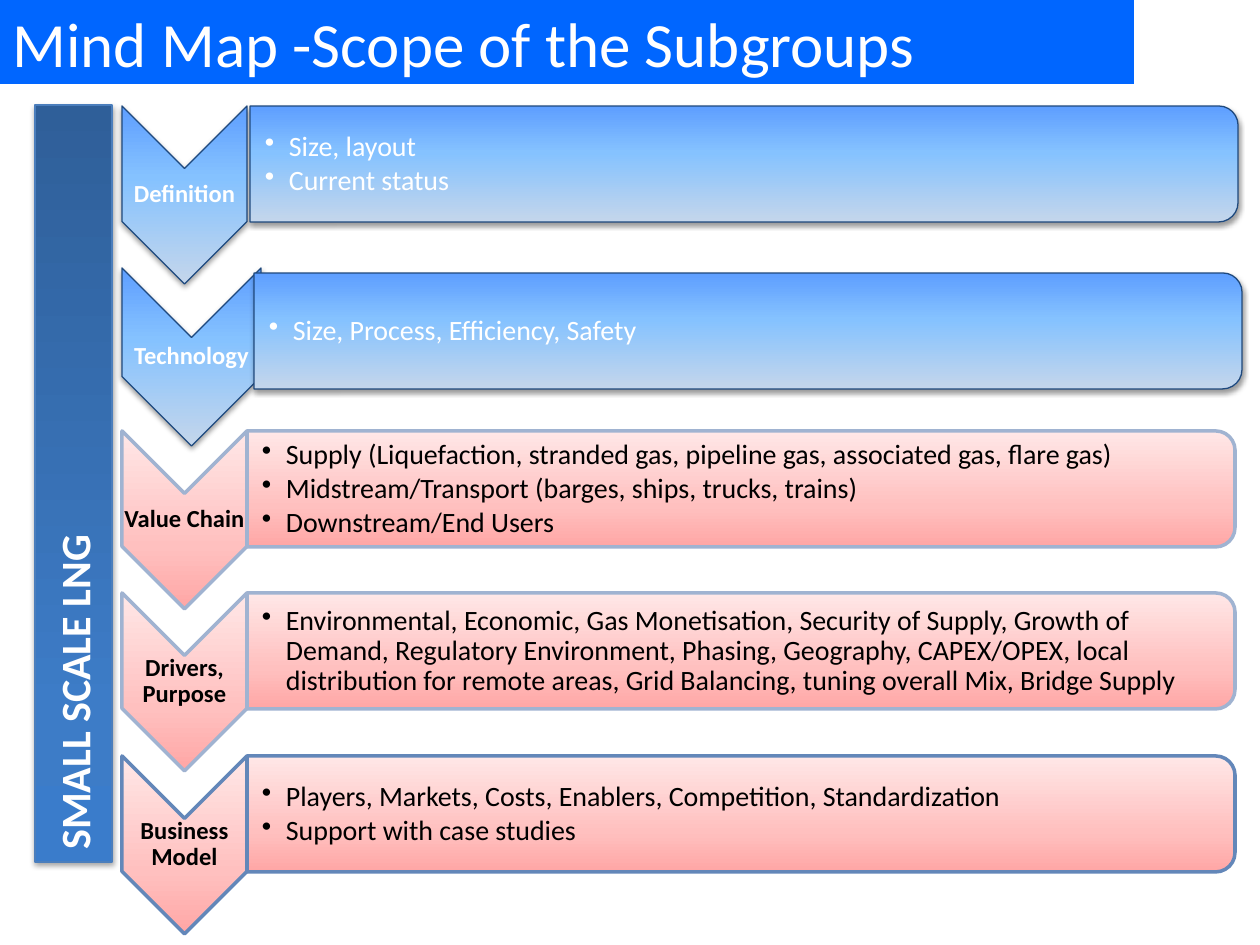
"""Build the mind map slide on the scope of the small scale LNG subgroups."""
from dataclasses import dataclass

from lxml import etree
from pptx import Presentation
from pptx import util as u
from pptx.dml.color import RGBColor
from pptx.enum import shapes, text
from pptx.oxml import parse_xml
from pptx.oxml.ns import nsdecls, qn


@dataclass(frozen=True)
class Look:
    """Hold the colours and paint of one kind of row."""
    stops: tuple
    angle: int
    line: str
    width: float
    ink: str
    shade: int = 0


class Theme:
    """Hold the fonts, type sizes and colours of the slide."""
    font = "Calibri"
    head, side, item, label = 36, 24, 16, 14
    white, black, banner = "FFFFFF", "000000", "0066FF"
    sky = ((0, "5E9EFF"), (40, "85C2FF"), (100, "C4D6EB"))
    rose = ((0, "FFA6A5"), (35, "FFC0BF"), (100, "FFE7E7"))
    navy = ((0, "2F5F99"), (80, "3D7CC7"), (100, "3A7CCB"))
    blue = Look(sky, 90, "1F497D", 0.75, white, 38)
    pink = Look(rose, 270, "A0B3D1", 2, black)
    deep = Look(rose, 270, "6387B9", 2, black)
    bar = Look(navy, 90, "4B7EBC", 0.75, white, 35)


ROWS = [
    ("Definition", Theme.blue, 125, 250, 0, ["Size, layout", "Current status"]),
    ("Technology", Theme.blue, 139, 254, 5, ["Size, Process, Efficiency, Safety"]),
    ("Value Chain", Theme.pink, 125, 247, 0, [
        "Supply (Liquefaction, stranded gas, pipeline gas, associated gas, flare gas)",
        "Midstream/Transport (barges, ships, trucks, trains)",
        "Downstream/End Users"]),
    ("Drivers, Purpose", Theme.pink, 125, 247, 0, [
        "Environmental, Economic, Gas Monetisation, Security of Supply, Growth of "
        "Demand, Regulatory Environment, Phasing, Geography, CAPEX/OPEX, local "
        "distribution for remote areas, Grid Balancing, tuning overall Mix, Bridge Supply"]),
    ("Business Model", Theme.deep, 125, 247, 0, [
        "Players, Markets, Costs, Enablers, Competition, Standardization",
        "Support with case studies"]),
]
LEFT, TOP, PITCH = 122, 106, 162.4
POINT, BAR_W, BAR_H = 178, 988, 116


def px(n):
    """Turn pixels into EMU."""
    return u.Emu(round(n * 914400 / 126))


def paint(shape, look):
    """Give a shape its gradient, outline and shadow."""
    shape.fill.background()
    stops = "".join(
        f'<a:gs pos="{pos * 1000}"><a:srgbClr val="{hue}"/></a:gs>'
        for pos, hue in look.stops)
    grad = parse_xml(
        f'<a:gradFill {nsdecls("a")} rotWithShape="0"><a:gsLst>{stops}</a:gsLst>'
        f'<a:lin ang="{look.angle * 60000}" scaled="0"/></a:gradFill>')
    props = shape._element.spPr
    props.replace(props.find(qn("a:noFill")), grad)
    shape.line.color.rgb = RGBColor.from_string(look.line)
    shape.line.width = u.Pt(look.width)
    shape.shadow.inherit = False
    if look.shade:
        props.find(qn("a:effectLst")).append(parse_xml(
            f'<a:outerShdw {nsdecls("a")} blurRad="40000" dist="20000" dir="5400000" '
            f'rotWithShape="0"><a:srgbClr val="000000">'
            f'<a:alpha val="{look.shade * 1000}"/></a:srgbClr></a:outerShdw>'))


def style(para, size, ink, bold=False):
    """Format the runs of a paragraph."""
    for run in para.runs:
        run.font.name = Theme.font
        run.font.size = u.Pt(size)
        run.font.bold = bold
        run.font.color.rgb = RGBColor.from_string(ink)


def turned(slide, kind, x, y, w, h, look):
    """Add a shape turned a quarter that covers the given box."""
    shape = slide.shapes.add_shape(
        kind, px(x + (w - h) / 2), px(y + (h - w) / 2), px(h), px(w))
    shape.rotation = 90
    paint(shape, look)


def box(slide, x, y, w, h, inset=1):
    """Add a wrapped, middle anchored text box and return its frame."""
    frame = slide.shapes.add_textbox(px(x), px(y), px(w), px(h)).text_frame
    frame.word_wrap = True
    frame.vertical_anchor = text.MSO_ANCHOR.MIDDLE
    frame.margin_left = px(inset)
    frame.margin_top = frame.margin_right = frame.margin_bottom = px(1)
    return frame


def bullet(para):
    """Give a paragraph a hanging bullet."""
    props = para._p.get_or_add_pPr()
    props.set("marL", str(px(24)))
    props.set("indent", str(-px(24)))
    etree.SubElement(props, qn("a:buChar")).set("char", "•")


def add_label(slide, name, y, w, look):
    """Add the name on a chevron."""
    frame = box(slide, LEFT, y, w, 53)
    frame.text = name
    para = frame.paragraphs[0]
    para.alignment = text.PP_ALIGN.CENTER
    para.line_spacing = 0.9
    style(para, Theme.label, look.ink, True)


def add_list(slide, items, x, y, look):
    """Add the bulleted list on a bar."""
    frame = box(slide, x, y, BAR_W - 5, 105, 15)
    frame.text = "\n".join(items)
    for para in frame.paragraphs:
        bullet(para)
        para.line_spacing = 0.9
        para.space_after = u.Pt(2)
        style(para, Theme.item, look.ink)


def add_row(slide, rank, row):
    """Add one chevron with its bar and list."""
    name, look, wide, x, drop, items = row
    y = TOP + round(PITCH * rank)
    turned(slide, shapes.MSO_SHAPE.CHEVRON, LEFT, y, wide, POINT, look)
    add_label(slide, name, y + 62, wide, look)
    turned(slide, shapes.MSO_SHAPE.ROUND_2_SAME_RECTANGLE,
           x, y + drop, BAR_W, BAR_H, look)
    add_list(slide, items, x, y + drop + 6, look)


def add_title(slide):
    """Fill and place the title banner."""
    title = slide.shapes.title
    title.left, title.top, title.width, title.height = px(0), px(0), px(1134), px(84)
    title.fill.solid()
    title.fill.fore_color.rgb = RGBColor.from_string(Theme.banner)
    frame = title.text_frame
    frame.text = "Mind Map -Scope of the Subgroups"
    frame.auto_size = text.MSO_AUTO_SIZE.NONE
    frame.vertical_anchor = text.MSO_ANCHOR.MIDDLE
    frame.paragraphs[0].alignment = text.PP_ALIGN.LEFT
    style(frame.paragraphs[0], Theme.head, Theme.white)


def add_side(slide):
    """Add the side bar with its upward text."""
    side = slide.shapes.add_shape(
        shapes.MSO_SHAPE.RECTANGLE, px(35), px(105), px(77), px(757))
    paint(side, Theme.bar)
    frame = side.text_frame
    frame.text = "SMALL SCALE LNG"
    frame._txBody.bodyPr.set("vert", "vert270")
    frame.vertical_anchor = text.MSO_ANCHOR.MIDDLE
    frame.paragraphs[0].alignment = text.PP_ALIGN.LEFT
    style(frame.paragraphs[0], Theme.side, Theme.bar.ink, True)


def main():
    """Build and save the slide."""
    deck = Presentation()
    deck.slide_width, deck.slide_height = px(1260), px(945)
    slide = deck.slides.add_slide(deck.slide_layouts[5])
    for rank, row in enumerate(ROWS):
        add_row(slide, rank, row)
    add_title(slide)
    add_side(slide)
    deck.save("out.pptx")


if __name__ == "__main__":
    main()
